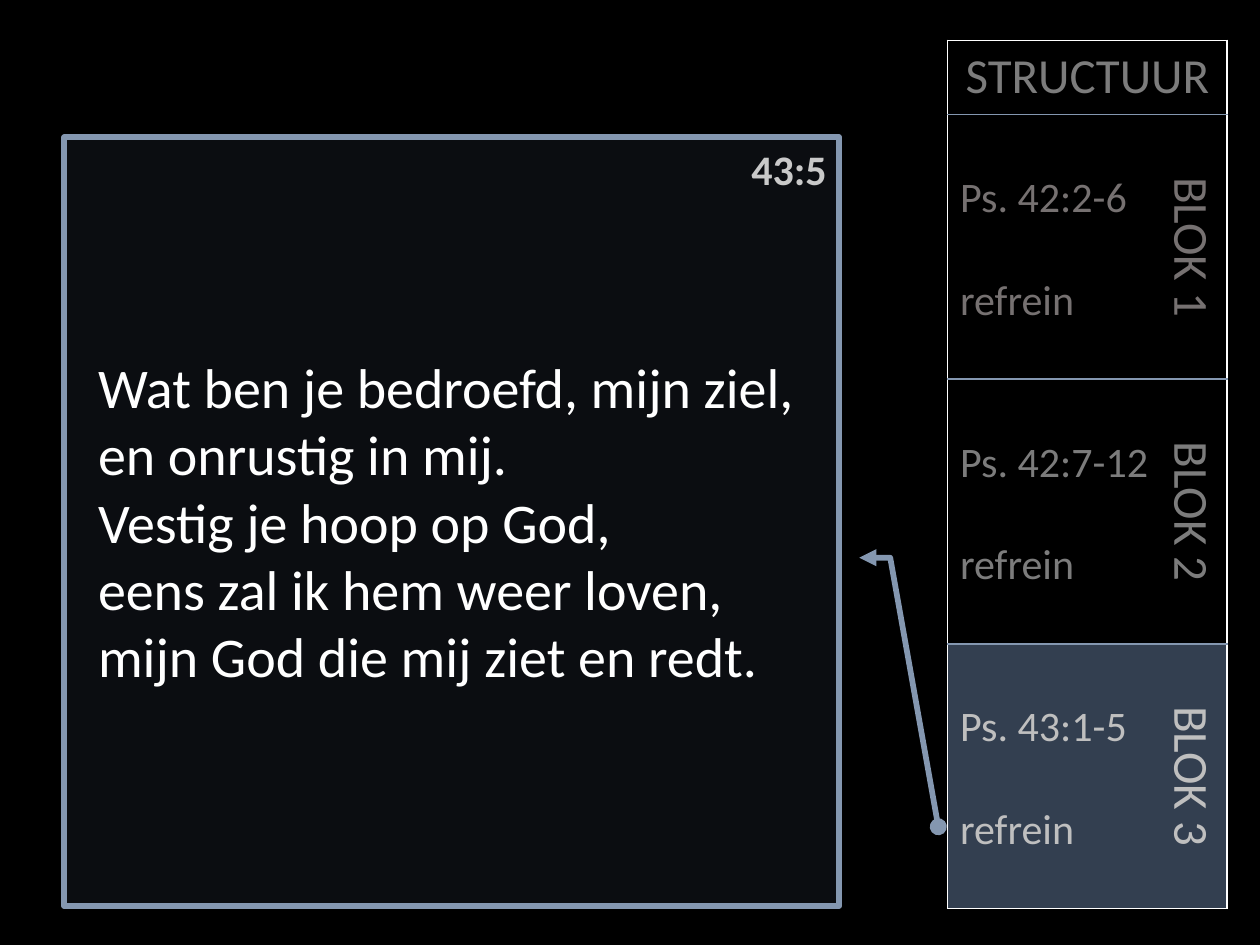
"""Build the slide on Psalm 43:5 with its three-block structure table."""
from dataclasses import dataclass

import lxml.etree
import pptx
import pptx.dml.color
import pptx.enum.shapes
import pptx.enum.text
import pptx.oxml.ns
import pptx.util

Inches = pptx.util.Inches
Pt = pptx.util.Pt
Align = pptx.enum.text.PP_ALIGN
Anchor = pptx.enum.text.MSO_ANCHOR


@dataclass(frozen=True)
class Theme:
    font: str = "Calibri"
    background: str = "000000"
    white: str = "FFFFFF"
    accent: str = "8497B0"
    panel: str = "222A35"
    panel_opacity: int = 33
    highlight: str = "333F50"
    heading: str = "7C7C7C"
    reference: str = "C9C9C9"
    small: int = 24
    medium: int = 28
    large: int = 32


@dataclass(frozen=True)
class Block:
    name: str
    passage: str
    color: str
    fill: str | None = None


THEME = Theme()
BLOCKS = (
    Block("BLOK 1", "Ps. 42:2-6", "767171"),
    Block("BLOK 2", "Ps. 42:7-12", THEME.heading),
    Block("BLOK 3", "Ps. 43:1-5", "BFBFBF", THEME.highlight),
)
VERSE = (
    "Wat ben je bedroefd, mijn ziel,",
    "en onrustig in mij.",
    "Vestig je hoop op God,",
    "eens zal ik hem weer loven,",
    "mijn God die mij ziet en redt.",
)


def rgb(color: str) -> pptx.dml.color.RGBColor:
    """Turn a hexadecimal string into a colour."""
    return pptx.dml.color.RGBColor.from_string(color)


def add_element(parent, tag: str, **attributes: str):
    """Append a DrawingML element and return it."""
    element = lxml.etree.SubElement(parent, pptx.oxml.ns.qn(tag))
    for name, value in attributes.items():
        element.set(name, value)
    return element


def write_text(frame, *lines: str, size: int, color: str, bold: bool = False,
               align=Align.LEFT, gap: float = 0) -> None:
    """Write one paragraph per line, with a gap in points between them."""
    for index, line in enumerate(lines):
        paragraph = frame.add_paragraph() if index else frame.paragraphs[0]
        paragraph.alignment = align
        if index and gap:
            paragraph.space_before = Pt(gap)
        run = paragraph.add_run()
        run.text = line
        run.font.name = THEME.font
        run.font.size = Pt(size)
        run.font.bold = bold
        run.font.color.rgb = rgb(color)


def format_cell(cell, fill: str | None = None, **borders: str | None) -> None:
    """Draw the borders L, R, T and B of a cell and set its fill."""
    properties = cell._tc.get_or_add_tcPr()
    for side in "LRTB":
        color = borders.get(side)
        line = add_element(properties, f"a:ln{side}", w=str(Pt(1)))
        if color:
            solid = add_element(line, "a:solidFill")
            add_element(solid, "a:srgbClr", val=color)
        else:
            add_element(line, "a:noFill")
    if fill:
        cell.fill.solid()
        cell.fill.fore_color.rgb = rgb(fill)
    else:
        cell.fill.background()


def add_structure(slide) -> None:
    """Add the table with a heading and one row per block."""
    heights = [0.59] + [2.1] * len(BLOCKS)
    table = slide.shapes.add_table(
        len(heights), 2, Inches(7.52), Inches(0.32), Inches(2.22), Inches(sum(heights))
    ).table
    table.first_row = table.horz_banding = False
    for column, width in zip(table.columns, (1.77, 0.45)):
        column.width = Inches(width)
    for row, height in zip(table.rows, heights):
        row.height = Inches(height)

    heading = table.cell(0, 0)
    heading.merge(table.cell(0, 1))
    write_text(heading.text_frame, "STRUCTUUR", size=THEME.medium,
               color=THEME.heading, align=Align.CENTER)
    for column in range(2):
        format_cell(table.cell(0, column), L=THEME.white, R=THEME.white,
                    T=THEME.white, B=THEME.accent)

    for row, block in enumerate(BLOCKS, start=1):
        bottom = THEME.white if row == len(BLOCKS) else THEME.accent
        content, label = table.cell(row, 0), table.cell(row, 1)
        content.margin_top = Inches(0.46)
        write_text(content.text_frame, block.passage, "refrein",
                   size=THEME.small, color=block.color, gap=29.3)
        format_cell(content, block.fill, L=THEME.white, T=THEME.accent, B=bottom)
        label.vertical_anchor = Anchor.MIDDLE
        label._tc.get_or_add_tcPr().set("vert", "vert")
        write_text(label.text_frame, block.name, size=THEME.medium,
                   color=block.color, align=Align.CENTER)
        format_cell(label, block.fill, R=THEME.white, T=THEME.accent, B=bottom)


def add_verse_panel(slide) -> None:
    """Add the callout that points from the last refrain to the verse."""
    panel = slide.shapes.add_shape(
        pptx.enum.shapes.MSO_SHAPE.LINE_CALLOUT_2,
        Inches(0.51), Inches(1.09), Inches(6.15), Inches(6.1))
    for index, value in enumerate((0.547, 1.026, 0.547, 1.066, 0.897, 1.128)):
        panel.adjustments[index] = value
    panel.shadow.inherit = False
    panel.fill.solid()
    panel.fill.fore_color.rgb = rgb(THEME.panel)
    color = panel._element.spPr.find(".//" + pptx.oxml.ns.qn("a:srgbClr"))
    add_element(color, "a:alpha", val=str(THEME.panel_opacity * 1000))
    panel.line.color.rgb = rgb(THEME.accent)
    panel.line.width = Pt(3.25)
    line = panel.line._get_or_add_ln()
    add_element(line, "a:headEnd", type="triangle")
    add_element(line, "a:tailEnd", type="oval")


def add_text(slide, left: float, top: float, width: float, height: float,
             *lines: str, **text_format) -> None:
    """Add a wrapping text box, placed in inches."""
    box = slide.shapes.add_textbox(Inches(left), Inches(top), Inches(width), Inches(height))
    box.text_frame.word_wrap = True
    write_text(box.text_frame, *lines, **text_format)


def main() -> None:
    """Build and save the presentation."""
    presentation = pptx.Presentation()
    presentation.slide_width = Inches(10)
    presentation.slide_height = Inches(7.5)
    slide = presentation.slides.add_slide(presentation.slide_layouts[6])
    slide.background.fill.solid()
    slide.background.fill.fore_color.rgb = rgb(THEME.background)
    add_structure(slide)
    add_verse_panel(slide)
    add_text(slide, 5.48, 1.09, 1.18, 0.5, "43:5", size=THEME.small,
             color=THEME.reference, bold=True, align=Align.RIGHT)
    add_text(slide, 0.68, 2.75, 5.87, 2.79, *VERSE, size=THEME.large, color=THEME.white)
    presentation.save("out.pptx")


if __name__ == "__main__":
    main()
